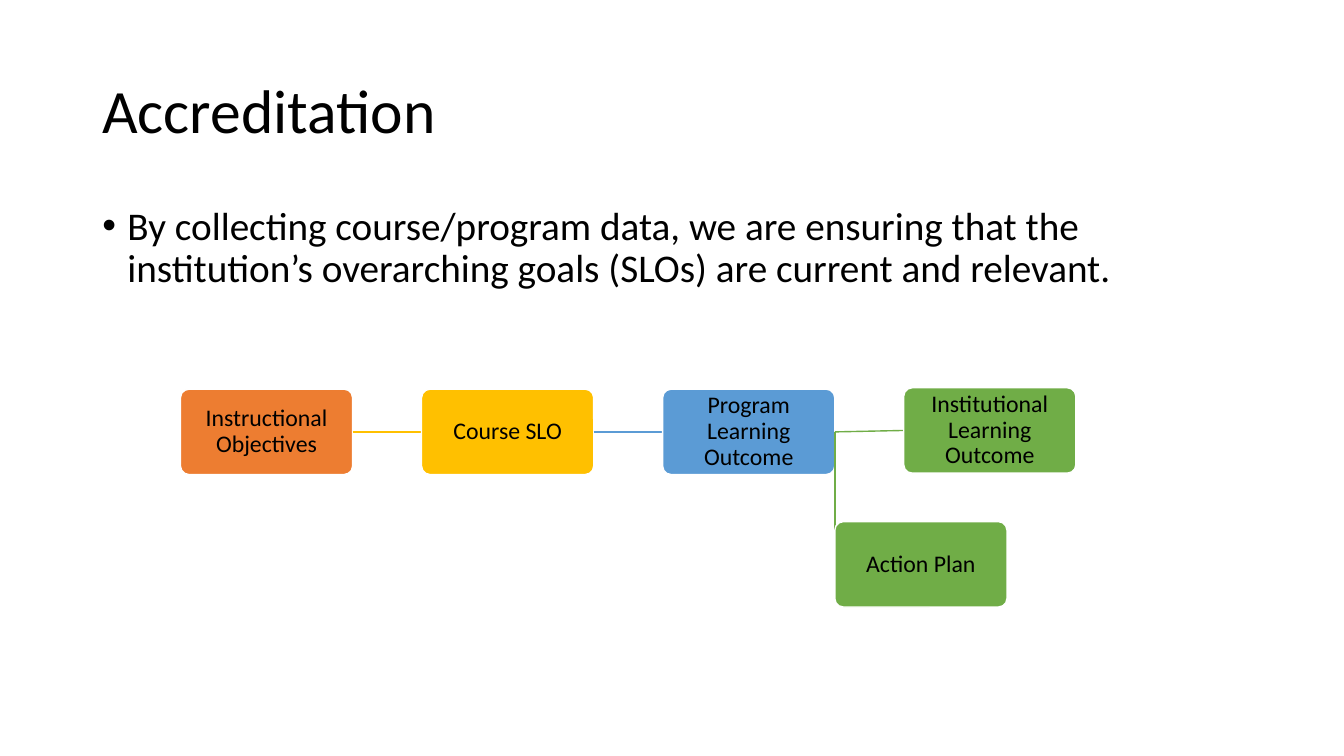
from dataclasses import dataclass
from typing import Any, Optional

from lxml.etree import SubElement
from pptx import Presentation
from pptx.dml.color import RGBColor
from pptx.enum.shapes import MSO_CONNECTOR as Connector, MSO_SHAPE as Preset
from pptx.enum.text import MSO_ANCHOR as Anchor, PP_ALIGN as Align
from pptx.oxml.ns import qn
from pptx.util import Pt

BLACK = RGBColor(0x00, 0x00, 0x00)
WHITE = RGBColor(0xFF, 0xFF, 0xFF)
ORANGE = RGBColor(0xED, 0x7D, 0x31)
GOLD = RGBColor(0xFF, 0xC0, 0x00)
BLUE = RGBColor(0x5B, 0x9B, 0xD5)
GREEN = RGBColor(0x70, 0xAD, 0x47)

BOX_WIDTH, BOX_HEIGHT = 123, 61
FIRST_LEFT, STEP, ROW_TOP = 128.9, 172.2, 278
LEFT_SIDE, RIGHT_SIDE = 1, 3


@dataclass(frozen=True)
class Stage:
    label: str
    color: RGBColor
    left: float
    top: float = ROW_TOP
    parent: Optional[str] = None


@dataclass(frozen=True)
class Heading:
    text: str
    top: float
    height: float
    size: float
    anchor: Anchor
    bullet: bool = False


PROGRAM = "Program Learning Outcome"
STAGES = (
    Stage("Instructional Objectives", ORANGE, FIRST_LEFT),
    Stage("Course SLO", GOLD, FIRST_LEFT + STEP, parent="Instructional Objectives"),
    Stage(PROGRAM, BLUE, FIRST_LEFT + 2 * STEP, parent="Course SLO"),
    Stage("Institutional Learning Outcome", GREEN, FIRST_LEFT + 3 * STEP, 277, PROGRAM),
    Stage("Action Plan", GREEN, FIRST_LEFT + 2 * STEP + BOX_WIDTH, 372.6, PROGRAM),
)

HEADINGS = (
    Heading("Accreditation", 28.75, 104.4, 44, Anchor.MIDDLE),
    Heading(
        "By collecting course/program data, we are ensuring that the "
        "institution’s overarching goals (SLOs) are current and relevant.",
        143.75, 342.6, 28, Anchor.TOP, bullet=True,
    ),
)


def set_attributes(target: Any, values: dict[str, Any]) -> None:
    for name, value in values.items():
        setattr(target, name, value)


def write_text(shape: Any, text: str, size: float, anchor: Anchor, align: Align) -> Any:
    set_attributes(shape.text_frame, {"word_wrap": True, "vertical_anchor": anchor})
    paragraph = shape.text_frame.paragraphs[0]
    set_attributes(paragraph, {"alignment": align, "line_spacing": 0.9})
    run = paragraph.add_run()
    run.text = text
    set_attributes(run.font, {"name": "Calibri", "size": Pt(size)})
    run.font.color.rgb = BLACK
    return paragraph


def add_bullet(paragraph: Any) -> None:
    paragraph.space_before = Pt(10)
    properties = paragraph._p.get_or_add_pPr()
    properties.set("marL", str(Pt(18)))
    properties.set("indent", str(-Pt(18)))
    SubElement(properties, qn("a:buFont"), typeface="Arial")
    SubElement(properties, qn("a:buChar"), char="•")


def add_heading(slide: Any, heading: Heading) -> None:
    shape = slide.shapes.add_textbox(Pt(66), Pt(heading.top), Pt(828), Pt(heading.height))
    paragraph = write_text(shape, heading.text, heading.size, heading.anchor, Align.LEFT)
    if heading.bullet:
        add_bullet(paragraph)


def add_box(slide: Any, stage: Stage) -> Any:
    shape = slide.shapes.add_shape(
        Preset.ROUNDED_RECTANGLE,
        Pt(stage.left), Pt(stage.top), Pt(BOX_WIDTH), Pt(BOX_HEIGHT),
    )
    shape.adjustments[0] = 0.1
    shape.shadow.inherit = False
    shape.fill.solid()
    shape.fill.fore_color.rgb = stage.color
    shape.line.color.rgb = WHITE
    shape.line.width = Pt(1)
    sides = ("left", "right", "top", "bottom")
    set_attributes(shape.text_frame, {f"margin_{side}": Pt(2.5) for side in sides})
    write_text(shape, stage.label, 17, Anchor.MIDDLE, Align.CENTER)
    return shape


def add_link(slide: Any, color: RGBColor) -> Any:
    connector = slide.shapes.add_connector(Connector.STRAIGHT, 0, 0, 0, 0)
    connector.line.color.rgb = color
    connector.line.width = Pt(1)
    SubElement(connector._element.spPr, qn("a:effectLst"))
    return connector


def add_stages(slide: Any, stages: tuple[Stage, ...]) -> None:
    boxes: dict[str, Any] = {}
    for stage in stages:
        link = add_link(slide, stage.color) if stage.parent else None
        boxes[stage.label] = add_box(slide, stage)
        if link is not None:
            link.begin_connect(boxes[stage.parent], RIGHT_SIDE)
            link.end_connect(boxes[stage.label], LEFT_SIDE)


def main() -> None:
    presentation = Presentation()
    set_attributes(presentation, {"slide_width": Pt(960), "slide_height": Pt(540)})
    slide = presentation.slides.add_slide(presentation.slide_layouts[6])
    for heading in HEADINGS:
        add_heading(slide, heading)
    add_stages(slide, STAGES)
    presentation.save("out.pptx")


if __name__ == "__main__":
    main()
